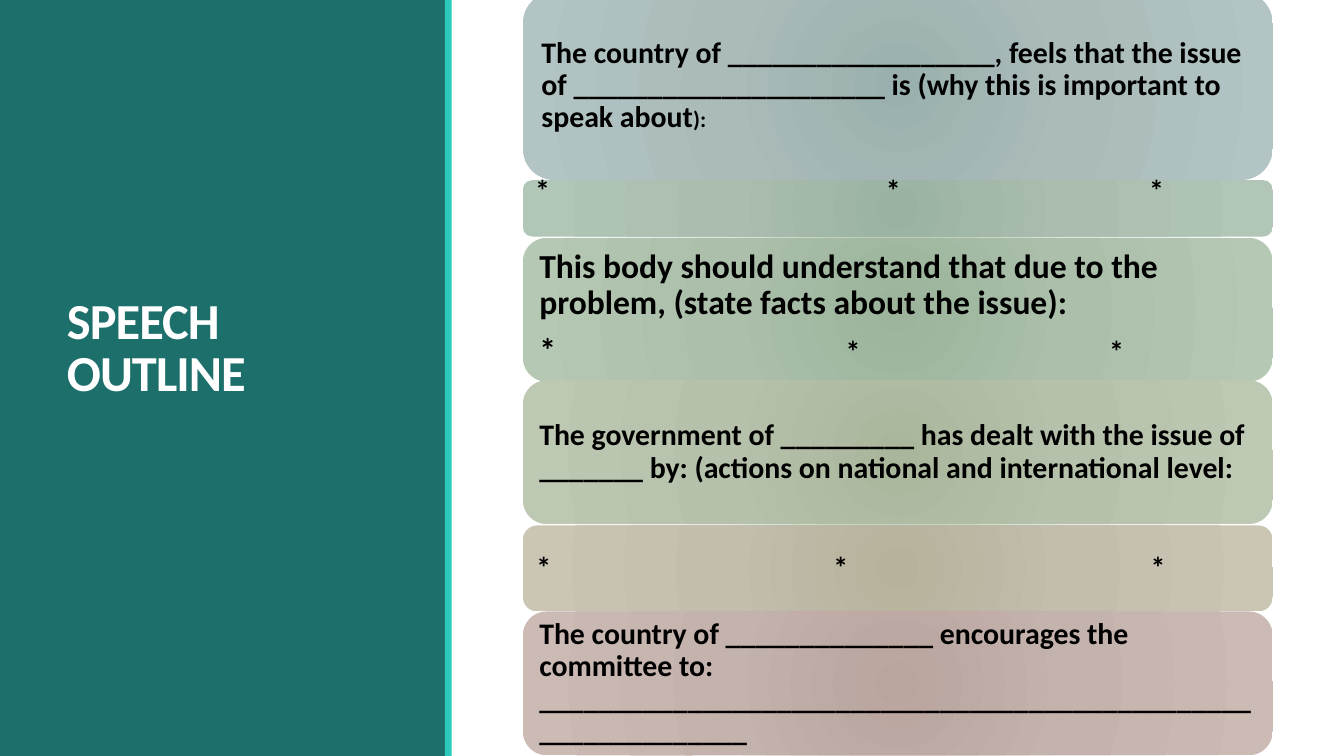
from dataclasses import dataclass
from lxml import etree
from pptx import Presentation
from pptx.dml.color import RGBColor
from pptx.enum.shapes import MSO_SHAPE as Shape
from pptx.enum.text import MSO_ANCHOR as Anchor, PP_ALIGN as Align
from pptx.oxml.ns import qn
from pptx.util import Inches, Pt

WIDTH = 10
HEIGHT = WIDTH * 9 / 16
PANEL_LEFT, PANEL_WIDTH = 3.89, 5.58
BULLETS = "*\t*\t*"

# Top, height, gradient, paragraphs (size, runs), tab stops, upward text shift
SECTIONS = [
    (-0.06, 1.4, ("9AB0AE", "AABBBA", "B2C4C3"),
     [(16, [("The country of __________________, feels that the issue of "
             "_____________________ is (why this is important to speak about", 16),
            ("):", 12)])]),
    (1.34, 0.42, ("9AB2A1", "AABDAF", "B2C6B8"),
     [(16, [(BULLETS, 16)])], (2.61, 4.57), 0.12),
    (1.77, 1.07, ("9CB49B", "ABBFAA", "B4C8B3"),
     [(18, [("This body should understand that due to the problem, "
             "(state facts about the issue):", 18)]),
      (18, [("*", 18), ("\t*\t*", 16)])], (2.28, 4.24)),
    (2.83, 1.07, ("A9B69B", "B6C1AB", "BEC9B3"),
     [(16, [("The government of _________ has dealt with the issue of _______ by: "
             "(actions on national and international level:", 16)])]),
    (3.91, 0.64, ("B7B29C", "C2BDAC", "CBC6B4"),
     [(16, [(BULLETS, 16)])], (2.21, 4.57)),
    (4.55, 1.07, ("B9A49E", "C4B2AD", "CCBAB5"),
     [(16, [("The country of ______________ encourages the committee to: " + "_" * 62, 16)])]),
]


def rgb(value):
    return RGBColor.from_string(value)


@dataclass
class SlideBuilder:
    slide: object
    font: str = "Calibri"
    ink: str = "000000"

    def bar(self, left, width, color):
        bar = self.slide.shapes.add_shape(
            Shape.RECTANGLE, Inches(left), 0, Inches(width), Inches(HEIGHT))
        bar.shadow.inherit = False
        bar.fill.solid()
        bar.fill.fore_color.rgb = rgb(color)
        bar.line.fill.background()

    def panel(self, left, top, width, height, colors):
        panel = self.slide.shapes.add_shape(
            Shape.ROUNDED_RECTANGLE, Inches(left), Inches(top), Inches(width), Inches(height))
        panel.shadow.inherit = False
        panel.line.fill.background()
        panel.fill.gradient()
        # Circular gradient with three stops
        gradient = panel._element.spPr.find(qn("a:gradFill"))
        for child in list(gradient):
            gradient.remove(child)
        stops = etree.SubElement(gradient, qn("a:gsLst"))
        for position, color in zip((0, 45, 100), colors):
            stop = etree.SubElement(stops, qn("a:gs"), pos=str(position * 1000))
            etree.SubElement(stop, qn("a:srgbClr"), val=color)
        circle = etree.SubElement(gradient, qn("a:path"), path="circle")
        etree.SubElement(circle, qn("a:fillToRect"), {side: "100000" for side in "ltrb"})

    def text(self, left, top, width, height, inset):
        box = self.slide.shapes.add_textbox(
            Inches(left), Inches(top), Inches(width), Inches(height))
        frame = box.text_frame
        frame.word_wrap = True
        frame.vertical_anchor = Anchor.MIDDLE
        frame.margin_left = frame.margin_right = Inches(inset)
        frame.margin_top = frame.margin_bottom = Inches(inset)
        return frame

    def style(self, paragraph, size, color, spacing):
        paragraph.alignment = Align.LEFT
        paragraph.line_spacing = spacing
        font = paragraph.font
        font.name, font.size, font.bold = self.font, Pt(size), True
        font.color.rgb = rgb(color)

    def title(self, wording, left, top, width, height):
        heading = self.text(left, top, width, height, 0.1).paragraphs[0]
        self.style(heading, 27, "FFFFFF", 0.85)
        run = heading.add_run()
        run.text = wording
        run.font._element.set("spc", "-50")

    def section(self, top, height, colors, paragraphs, tabs=(), lift=0):
        self.panel(PANEL_LEFT, top, PANEL_WIDTH, height, colors)
        corner = 0.049 * height  # room taken by the rounded corners
        frame = self.text(PANEL_LEFT + corner, top + corner - lift,
                          PANEL_WIDTH - 2 * corner, height - 2 * corner, 0.07)
        for index, (size, runs) in enumerate(paragraphs):
            paragraph = frame.add_paragraph() if index else frame.paragraphs[0]
            self.style(paragraph, size, self.ink, 0.9)
            paragraph.space_after = Pt(0.35 * size)
            for wording, run_size in runs:
                run = paragraph.add_run()
                run.text = wording
                if run_size != size:
                    run.font.size = Pt(run_size)
            if "\t" in paragraph.text:
                self.tab_stops(paragraph, tabs)

    def tab_stops(self, paragraph, tabs):
        properties = paragraph._p.get_or_add_pPr()
        stops = etree.Element(qn("a:tabLst"))
        for position in tabs:
            etree.SubElement(stops, qn("a:tab"), pos=str(Inches(position)), algn="l")
        properties.find(qn("a:defRPr")).addprevious(stops)


def main():
    deck = Presentation()
    deck.slide_width, deck.slide_height = Inches(WIDTH), Inches(HEIGHT)
    builder = SlideBuilder(deck.slides.add_slide(deck.slide_layouts[6]))

    # Title side
    builder.bar(0, 3.32, "1D6F6B")
    builder.title("SPEECH OUTLINE", 0.4, 0.24, 2.53, 4.73)
    builder.bar(3.31, 0.05, "2CCABB")

    # Speech sections
    for section in SECTIONS:
        builder.section(*section)

    deck.save("out.pptx")


if __name__ == "__main__":
    main()
